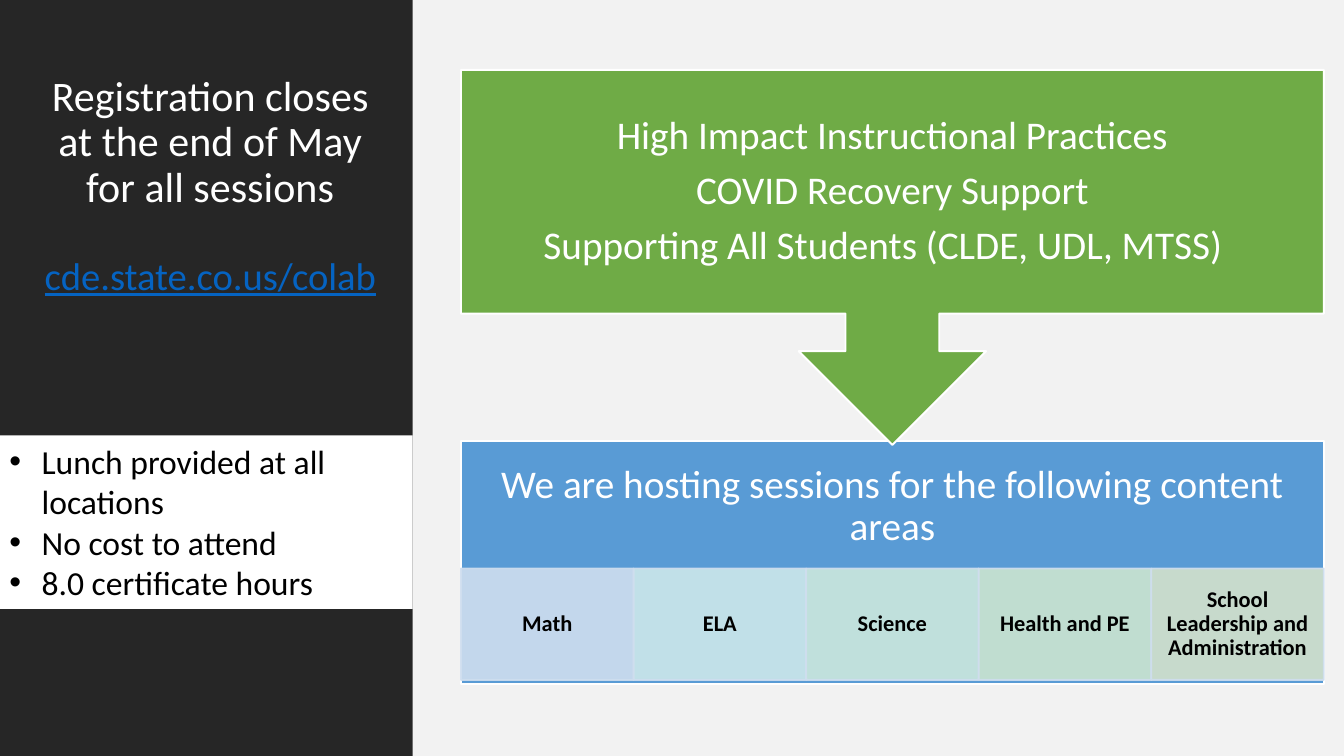
import pptx
import pptx.util
import pptx.dml.color
import pptx.enum.shapes
import pptx.enum.text
import pptx.oxml
import pptx.oxml.ns
from lxml import etree

Inches = pptx.util.Inches
Pt = pptx.util.Pt
RGBColor = pptx.dml.color.RGBColor
SHAPE = pptx.enum.shapes.MSO_SHAPE
ALIGN = pptx.enum.text.PP_ALIGN
ANCHOR = pptx.enum.text.MSO_ANCHOR
qn = pptx.oxml.ns.qn

PAGE_WIDTH = 10
PAGE_HEIGHT = PAGE_WIDTH * 9 / 16
SIDEBAR_WIDTH = 3.07

WHITE = RGBColor(0xFF, 0xFF, 0xFF)
BLACK = RGBColor(0, 0, 0)
CHARCOAL = RGBColor(0x26, 0x26, 0x26)
PALE_GRAY = RGBColor(0xF2, 0xF2, 0xF2)
BLUE = RGBColor(0x59, 0x9B, 0xD5)
GREEN = RGBColor(0x6F, 0xAB, 0x46)
LINK_BLUE = RGBColor(0x05, 0x63, 0xC1)
CELL_EDGE = RGBColor(0xCF, 0xDE, 0xEF)

TOPICS = ["High Impact Instructional Practices", "COVID Recovery Support",
          "Supporting All Students (CLDE, UDL, MTSS)"]
CONTENT_AREAS = [
    ("Math", RGBColor(0xCF, 0xDE, 0xEF)),
    ("ELA", RGBColor(0xCD, 0xE8, 0xEB)),
    ("Science", RGBColor(0xCC, 0xE8, 0xDD)),
    ("Health and PE", RGBColor(0xCC, 0xE5, 0xD0)),
    ("School Leadership and Administration", RGBColor(0xD3, 0xE1, 0xCC)),
]
PERKS = ["Lunch provided at all locations", "No cost to attend", "8.0 certificate hours"]


def add_block(page, box, fill, edge=None, kind=SHAPE.RECTANGLE):
    shape = page.shapes.add_shape(kind, *map(Inches, box))
    shape.shadow.inherit = False
    shape.fill.solid()
    shape.fill.fore_color.rgb = fill
    if edge is None:
        shape.line.fill.background()
    else:
        shape.line.color.rgb = edge
        shape.line.width = Pt(1)
    return shape


def set_opacity(shape, percent):
    for color in shape.element.spPr.iter(qn("a:srgbClr")):
        etree.SubElement(color, qn("a:alpha"), val=str(percent * 1000))


def prepare_frame(shape, insets, anchor):
    frame = shape.text_frame
    frame.word_wrap = True
    frame.vertical_anchor = anchor
    frame.margin_left, frame.margin_top, frame.margin_right, frame.margin_bottom = map(Inches, insets)
    return frame


def format_para(para, size, color, align=ALIGN.CENTER, spacing=0.9, bold=False):
    para.alignment = align
    para.line_spacing = spacing
    for span in para.runs:
        span.font.name = "Calibri"
        span.font.size = Pt(size)
        span.font.color.rgb = color
        span.font.bold = bold


def write_lines(shape, lines, insets, size, color, gap=0, anchor=ANCHOR.MIDDLE, **style):
    frame = prepare_frame(shape, insets, anchor)
    frame.text = "\n".join(lines)
    for index, para in enumerate(frame.paragraphs):
        format_para(para, size, color, **style)
        para.space_before = Pt(gap if index else 0)
    return frame


def add_bullet(para):
    properties = para._p.get_or_add_pPr()
    properties.set("marL", str(Inches(0.24)))
    properties.set("indent", str(-Inches(0.24)))
    color = etree.SubElement(properties, qn("a:buClr"))
    etree.SubElement(color, qn("a:srgbClr"), val=str(BLACK))
    etree.SubElement(properties, qn("a:buFont"), typeface="Arial")
    etree.SubElement(properties, qn("a:buChar"), char="•")


def add_sidebar(page, left, top, width, height):
    add_block(page, (left, top, width, height), CHARCOAL)
    title = page.shapes.add_textbox(Inches(left + 0.22), Inches(top + 0.52), Inches(2.69), Inches(1.79))
    insets = (0.07, 0.04, 0.07, 0.04)
    frame = write_lines(title, ["Registration closes at the end of May for all sessions",
                                "cde.state.co.us/colab"],
                        insets, 22.5, WHITE, gap=24.5, anchor=ANCHOR.TOP)
    address = frame.paragraphs[1]
    format_para(address, 20.7, LINK_BLUE)
    address.runs[0].font.underline = True

    panel = add_block(page, (left, top + 3.24, width, 1.29), WHITE)
    frame = write_lines(panel, PERKS, insets, 18, BLACK, anchor=ANCHOR.TOP,
                        align=ALIGN.LEFT, spacing=1.0)
    for para in frame.paragraphs:
        add_bullet(para)


def add_content_areas(page, left, top, width, height):
    header_height, cell_top, cell_height = 0.98, 0.95, 0.83
    panel = add_block(page, (left, top, width, height), BLUE, WHITE)
    write_lines(panel, ["We are hosting sessions for the following content areas"],
                (0.16, 0.16, 0.16, height - header_height + 0.16), 21, WHITE)
    cell_width = width / len(CONTENT_AREAS)
    for index, (name, fill) in enumerate(CONTENT_AREAS):
        box = (left + index * cell_width, top + cell_top, cell_width, cell_height)
        cell = add_block(page, box, fill, CELL_EDGE)
        set_opacity(cell, 90)
        write_lines(cell, [name], (0.09, 0.02, 0.09, 0.02), 12, BLACK, bold=True)


def add_topics_callout(page, left, top, width, height):
    callout = add_block(page, (left, top, width, height), GREEN, WHITE, SHAPE.DOWN_ARROW_CALLOUT)
    for index, value in enumerate((0.25, 0.25, 0.25, 0.65)):
        callout.adjustments[index] = value
    frame = write_lines(callout, TOPICS, (0.16,) * 4, 21, WHITE, gap=7)
    frame.paragraphs[-1]._p.get_or_add_pPr().set("marR", str(Inches(0.14)))


def main():
    deck = pptx.Presentation()
    deck.slide_width = Inches(PAGE_WIDTH)
    deck.slide_height = Inches(PAGE_HEIGHT)
    page = deck.slides.add_slide(deck.slide_layouts[6])
    add_block(page, (SIDEBAR_WIDTH, 0, PAGE_WIDTH - SIDEBAR_WIDTH, PAGE_HEIGHT), PALE_GRAY)
    add_sidebar(page, 0, 0, SIDEBAR_WIDTH, PAGE_HEIGHT)
    add_content_areas(page, 3.43, 3.28, 6.42, 1.81)
    add_topics_callout(page, 3.43, 0.52, 6.42, 2.79)
    deck.save("out.pptx")


if __name__ == "__main__":
    main()
